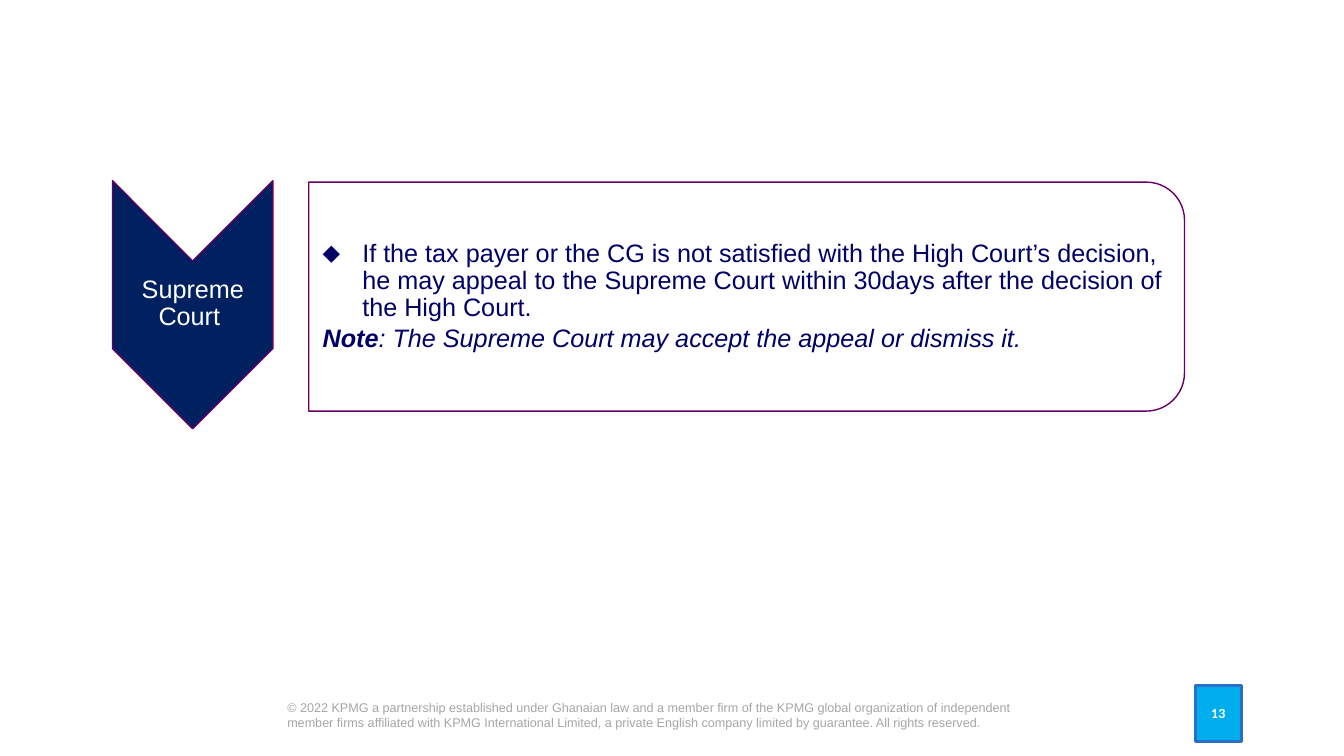
"""Build the Supreme Court appeal slide."""
from dataclasses import dataclass

from lxml.etree import SubElement
from pptx import Presentation
from pptx.dml.color import RGBColor as Rgb
from pptx.enum.shapes import MSO_SHAPE as Kind
from pptx.enum.text import MSO_ANCHOR as Anchor, MSO_AUTO_SIZE as Fit, PP_ALIGN as Align
from pptx.oxml.ns import qn
from pptx.util import Cm, Pt


@dataclass(frozen=True)
class Theme:
    font: str = "Arial"
    badge_font: str = "Calibri"
    main: float = 18
    small: float = 9
    page: float = 10
    white: str = "FFFFFF"
    navy: str = "002060"
    ink: str = "000066"
    plum: str = "660066"
    grey: str = "A6A6A6"
    sky: str = "00AEEE"
    blue: str = "2A6EC7"


@dataclass(frozen=True)
class Box:
    left: float
    top: float
    width: float
    height: float

    def lengths(self) -> tuple:
        return Cm(self.left), Cm(self.top), Cm(self.width), Cm(self.height)


@dataclass(frozen=True)
class Form:
    kind: Kind
    box: Box
    fill: str
    line: str
    weight: float = 1
    turn: float = 0


@dataclass(frozen=True)
class Label:
    text: str
    box: Box
    size: float
    color: str
    font: str
    bold: bool = False
    align: Align = Align.LEFT
    anchor: Anchor = Anchor.TOP


THEME = Theme()
BADGE = Form(Kind.RECTANGLE, Box(30.12, 17.27, 1.17, 1.42), THEME.sky, THEME.blue, 2.25)
ARROW = Form(Kind.CHEVRON, Box(1.73, 5.66, 6.25, 4.04), THEME.navy, THEME.plum, turn=90)
PANEL = Form(Kind.ROUND_2_SAME_RECTANGLE, Box(15.93, -3.56, 5.77, 22.07),
             THEME.white, THEME.plum, turn=90)
LABELS = (
    Label("© 2022 KPMG a partnership established under Ghanaian law and a member firm "
          "of the KPMG global organization of independent member firms affiliated with "
          "KPMG International Limited, a private English company limited by guarantee. "
          "All rights reserved.",
          Box(7.24, 17.63, 18.57, 1.04), THEME.small, THEME.grey, THEME.font),
    Label("13", Box(30.3, 17.42, 0.58, 0.76), THEME.page, THEME.white, THEME.badge_font,
          True, Align.RIGHT, Anchor.BOTTOM),
)
COURT = "Supreme Court "
COURT_BOX = Box(2.84, 6.55, 4.04, 2.21)
RULE = ("If the tax payer or the CG is not satisfied with the High Court’s decision, "
        "he may appeal to the Supreme Court within 30days after the decision of the "
        "High Court.")
NOTE = ("Note", ": The Supreme Court may accept the appeal or dismiss it.")
LIST_BOX = Box(7.77, 4.88, 21.79, 5.21)


def draw_form(slide, form: Form):
    shape = slide.shapes.add_shape(form.kind, *form.box.lengths())
    shape.shadow.inherit = False
    shape.rotation = form.turn
    shape.fill.solid()
    shape.fill.fore_color.rgb = Rgb.from_string(form.fill)
    shape.line.color.rgb = Rgb.from_string(form.line)
    shape.line.width = Pt(form.weight)
    return shape


def set_frame(shape, box: Box, anchor: Anchor, inset: float = 0, left: float = 0):
    shape.left, shape.top, shape.width, shape.height = box.lengths()
    frame = shape.text_frame
    frame.word_wrap = True
    frame.auto_size = Fit.NONE
    frame.vertical_anchor = anchor
    frame.margin_top = frame.margin_right = frame.margin_bottom = Cm(inset)
    frame.margin_left = Cm(left or inset)
    return frame


def style(para, size: float, color: str, font: str, bold: bool = False) -> None:
    for run in para.runs:
        run.font.size = Pt(size)
        run.font.name = font
        run.font.bold = bold
        run.font.color.rgb = Rgb.from_string(color)


def set_space(para, align: Align, after: float) -> None:
    para.alignment = align
    para.line_spacing = 0.9
    para.space_before = Pt(0)
    para.space_after = Pt(after)


def set_bullet(para, mark: str = "") -> None:
    props = para._p.get_or_add_pPr()
    props.set("marL", str(Cm(1)))
    props.set("indent", str(-Cm(1)))
    if mark:
        SubElement(props, qn("a:buChar")).set("char", mark)
    else:
        SubElement(props, qn("a:buNone"))


def draw_label(slide, label: Label) -> None:
    shape = slide.shapes.add_textbox(*label.box.lengths())
    frame = set_frame(shape, label.box, label.anchor)
    frame.text = label.text
    para = frame.paragraphs[0]
    para.alignment = label.align
    style(para, label.size, label.color, label.font, label.bold)


def fill_title(shape) -> None:
    frame = set_frame(shape, COURT_BOX, Anchor.MIDDLE, 0.03)
    frame.text = COURT
    para = frame.paragraphs[0]
    set_space(para, Align.CENTER, 0)
    style(para, THEME.main, THEME.white, THEME.font)


def fill_list(shape) -> None:
    frame = set_frame(shape, LIST_BOX, Anchor.MIDDLE, 0.03, 0.36)
    frame.text = RULE
    rule, note = frame.paragraphs[0], frame.add_paragraph()
    note.text = NOTE[0]
    note.add_run().text = NOTE[1]
    for para, mark in ((rule, "⬥"), (note, "")):
        set_bullet(para, mark)
        set_space(para, Align.LEFT, 2.7)
        style(para, THEME.main, THEME.ink, THEME.font)
    for run in note.runs:
        run.font.italic = True
    note.runs[0].font.bold = True


def main() -> None:
    deck = Presentation()
    deck.slide_width, deck.slide_height = Cm(33.87), Cm(19.05)
    slide = deck.slides.add_slide(deck.slide_layouts[1])
    title, body = slide.shapes.title, slide.placeholders[1]
    draw_form(slide, BADGE)
    for label in LABELS:
        draw_label(slide, label)
    draw_form(slide, ARROW)
    panel = draw_form(slide, PANEL)
    tint = panel._element.spPr.find(qn("a:solidFill"))[0]
    SubElement(tint, qn("a:alpha")).set("val", "90000")
    fill_title(title)
    fill_list(body)
    for shape in (title, body):
        slide.shapes._spTree.append(shape._element)
    deck.save("out.pptx")


if __name__ == "__main__":
    main()
